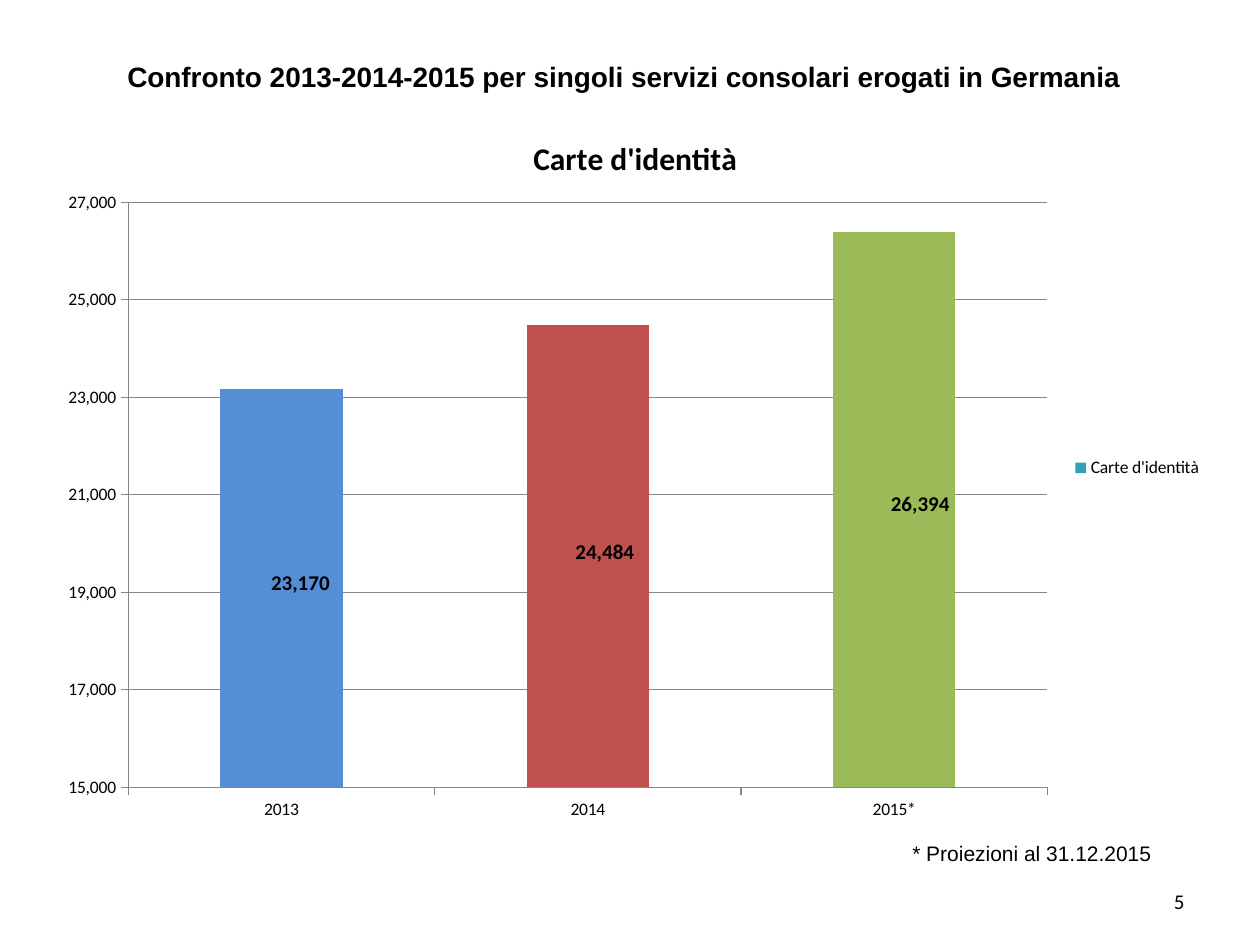
from lxml import etree
from pptx import Presentation
from pptx import util as u
from pptx.chart.data import CategoryChartData
from pptx.dml.color import RGBColor
from pptx.enum import chart as charts, text
from pptx.oxml import ns

SCALE = 914400 // 126  # EMU per px
BLACK, GREY, TEAL = "000000", "868686", "31A0BD"
SERVICE = "Carte d'identità"
# Year, value, bar colour, label shift in px
BARS = [
    ("2013", 23170, "558ED5", (19, -5)),
    ("2014", 24484, "C0504D", (17, -4)),
    ("2015*", 26394, "9BBB59", (26, -5)),
]


def px(length):
    return u.Emu(length * SCALE)


def color(hex_string):
    return RGBColor.from_string(hex_string)


def style_font(font, size, name="Calibri", bold=False):
    font.size, font.name, font.bold = u.Pt(size), name, bold
    font.color.rgb = color(BLACK)


def add_text(slide, box, words, size, name, align, bold=False,
             anchor=text.MSO_ANCHOR.TOP):
    frame = slide.shapes.add_textbox(*map(px, box)).text_frame
    frame.word_wrap = True
    frame.vertical_anchor = anchor
    paragraph = frame.paragraphs[0]
    paragraph.alignment = align
    run = paragraph.add_run()
    run.text = words
    style_font(run.font, size, name, bold)


def make_layout(**settings):
    """Manual chart layout; every setting is one c: element."""
    layout = etree.Element(ns.qn("c:layout"))
    manual = etree.SubElement(layout, ns.qn("c:manualLayout"))
    for tag, value in settings.items():
        etree.SubElement(manual, ns.qn("c:" + tag)).set("val", str(value))
    return layout


def replace_layout(parent, layout, previous=None):
    for old in parent.findall(ns.qn("c:layout")):
        parent.remove(old)
    if previous is None:
        parent.insert(0, layout)
    else:
        previous.addnext(layout)


def style_axis(axis):
    axis.major_tick_mark = charts.XL_TICK_MARK.OUTSIDE
    axis.minor_tick_mark = charts.XL_TICK_MARK.NONE
    axis.format.line.color.rgb = color(GREY)
    style_font(axis.tick_labels.font, 10)


def add_service_chart(slide, box):
    left, top, width, height = box
    data = CategoryChartData(number_format="#,##0")
    data.categories = [bar[0] for bar in BARS]
    data.add_series(SERVICE, [bar[1] for bar in BARS])
    chart = slide.shapes.add_chart(
        charts.XL_CHART_TYPE.COLUMN_STACKED, *map(px, box), data).chart
    style_font(chart.font, 10)

    # Title
    chart.has_title = True
    title = chart.chart_title
    run = title.text_frame.paragraphs[0].add_run()
    run.text = SERVICE
    style_font(run.font, 18, bold=True)
    title.include_in_layout = False
    replace_layout(
        title._element,
        make_layout(xMode="edge", yMode="edge",
                    x=round((528 - left) / width, 3),
                    y=round((131 - top) / height, 3)),
        title._element.find(ns.qn("c:tx")))

    # Legend
    chart.has_legend = True
    chart.legend.position = charts.XL_LEGEND_POSITION.RIGHT
    chart.legend.include_in_layout = False
    style_font(chart.legend.font, 10)

    # Axes and gridlines
    style_axis(chart.category_axis)
    axis = chart.value_axis
    style_axis(axis)
    axis.minimum_scale, axis.maximum_scale, axis.major_unit = 15000, 27000, 2000
    axis.has_major_gridlines = True
    axis.major_gridlines.format.line.color.rgb = color(GREY)
    axis.tick_labels.number_format = "#,##0"
    axis.tick_labels.number_format_is_linked = False

    # Plot area
    plot = chart.plots[0]
    plot.gap_width, plot.overlap, plot.vary_by_categories = 150, 100, False
    plot_area = chart._chartSpace.chart.plotArea
    replace_layout(plot_area, make_layout(
        layoutTarget="inner", xMode="edge", yMode="edge",
        x=round((128 - left) / width, 3), y=round((202 - top) / height, 3),
        w=round(919 / width, 3), h=round(585 / height, 3)))

    # Bars and their labels
    series = plot.series[0]
    series.format.fill.solid()
    series.format.fill.fore_color.rgb = color(TEAL)
    labels = series.data_labels
    labels.show_value = True
    labels.number_format, labels.number_format_is_linked = "#,##0", False
    style_font(labels.font, 12, bold=True)
    for index, (_, _, fill, _) in enumerate(BARS):
        point = series.points[index]
        point.format.fill.solid()
        point.format.fill.fore_color.rgb = color(fill)
        style_font(point.data_label.font, 12, bold=True)
        point.data_label.position = charts.XL_LABEL_POSITION.CENTER
    for label, bar in zip(series._element.iter(ns.qn("c:dLbl")), BARS):
        shift_x, shift_y = bar[3]
        replace_layout(label,
                       make_layout(x=round(shift_x / width, 4),
                                   y=round(shift_y / height, 4)),
                       label.find(ns.qn("c:idx")))


def build_slide(presentation):
    slide = presentation.slides.add_slide(presentation.slide_layouts[6])
    align = text.PP_ALIGN
    # Page number
    add_text(slide, (903, 876, 294, 50), "5", 12, "Calibri", align.RIGHT,
             anchor=text.MSO_ANCHOR.MIDDLE)
    add_service_chart(slide, (44, 100, 1171, 736))
    # Heading and footnote
    add_text(slide, (9, 53, 1230, 47),
             "Confronto 2013-2014-2015 per singoli servizi consolari "
             "erogati in Germania", 16, "Arial", align.CENTER, bold=True)
    add_text(slide, (898, 834, 268, 38), "* Proiezioni al 31.12.2015",
             12, "Arial", align.CENTER)


def main():
    presentation = Presentation()
    presentation.slide_width, presentation.slide_height = px(1260), px(945)
    build_slide(presentation)
    presentation.save("out.pptx")


if __name__ == "__main__":
    main()
